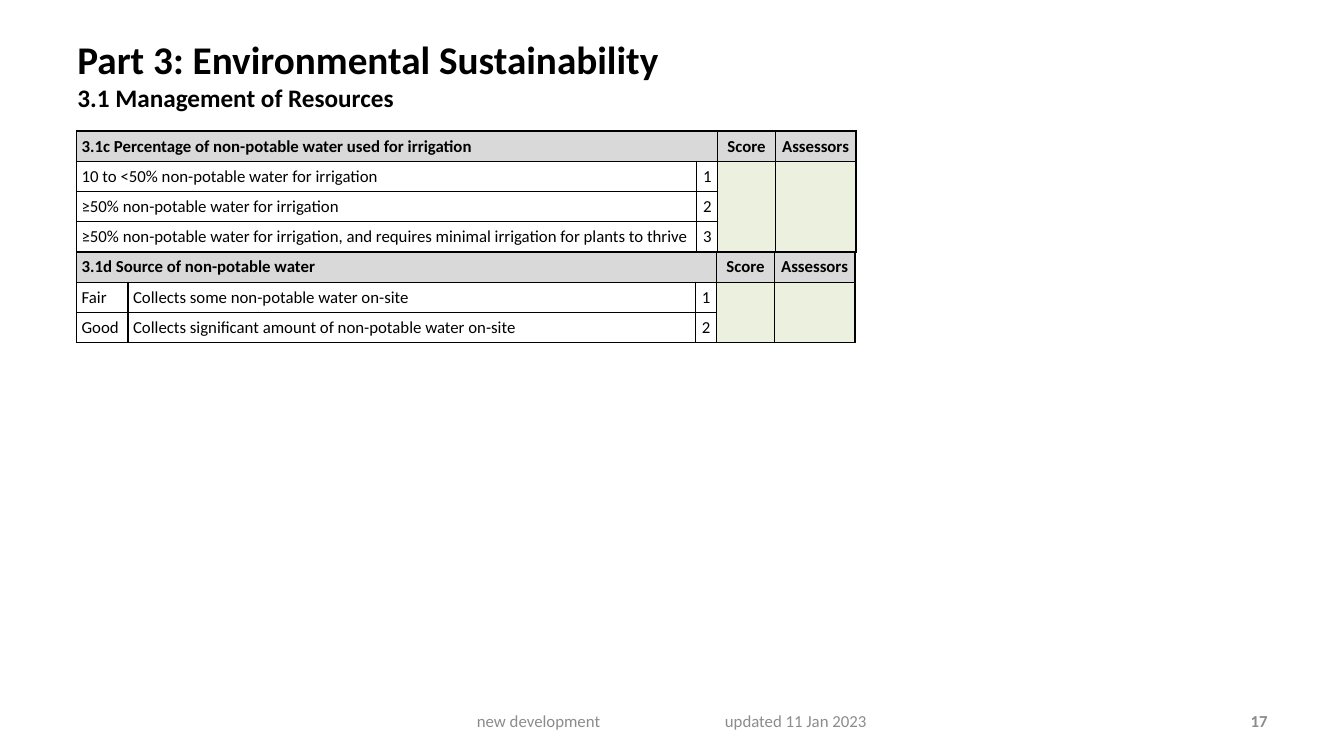
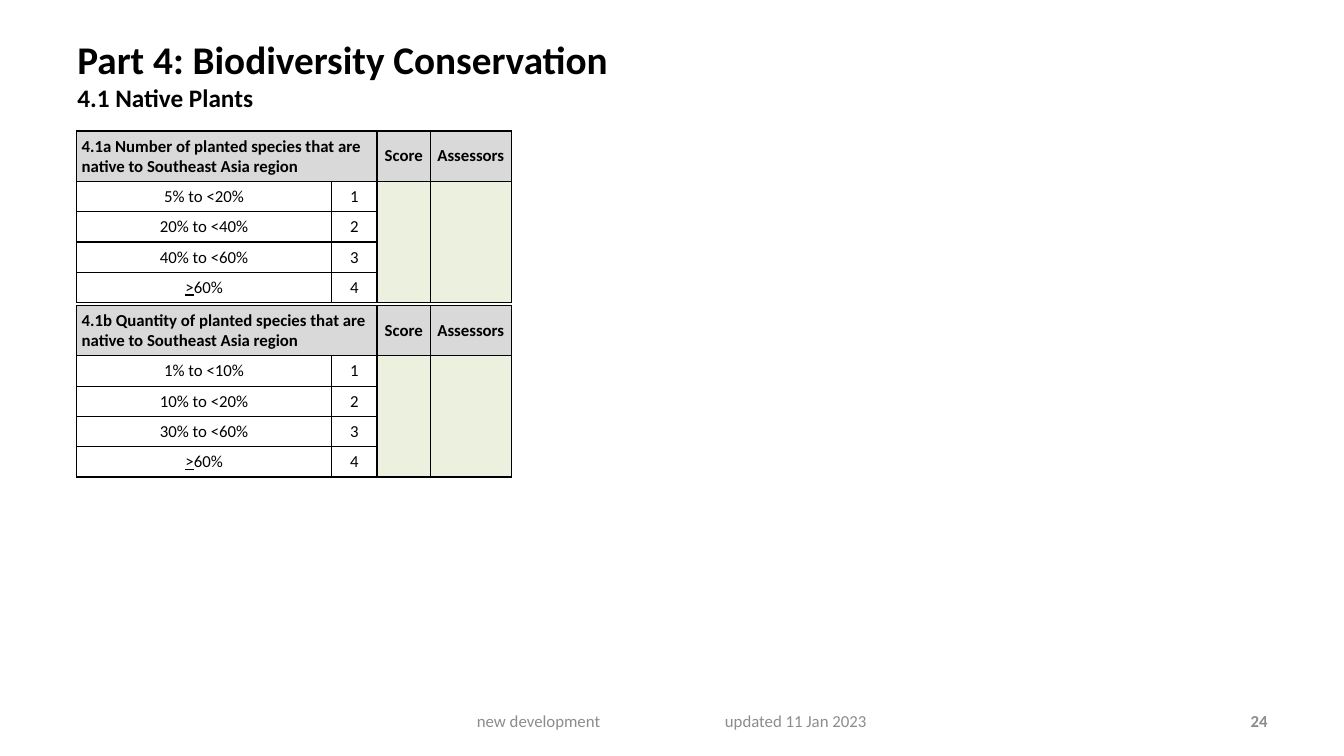
from lxml import etree
from pptx import Presentation
from pptx.dml.color import RGBColor
from pptx.enum.text import MSO_ANCHOR, PP_ALIGN
from pptx.oxml.ns import qn
from pptx.util import Pt

LEFT, CENTER, RIGHT = PP_ALIGN.LEFT, PP_ALIGN.CENTER, PP_ALIGN.RIGHT
TOP, MIDDLE = MSO_ANCHOR.TOP, MSO_ANCHOR.MIDDLE

PX = 9144  # EMU per px, 100 px to the inch
FONT = "Calibri"
BLACK, WHITE, GREY = "000000", "FFFFFF", "8C8C8C"
HEADER_FILL, SCORE_FILL = "D9D9D9", "EBF1DE"

TITLE_BOX = (67, 30, 1036, 99)
FOOTER_BOX = (456, 695, 422, 40)
NUMBER_BOX = (956, 695, 311, 40)
TABLE_LEFT, TABLE_TOP = 76, 130
ROW_H = 30
CELL_INSET = 5
FOOTER_INSET, FOOTER_TAB = 17, 246


def px(n):
    return int(n * PX)


def rgb(value):
    return RGBColor.from_string(value)


def style(r, size=12, color=BLACK, bold=False):
    r.font.name = FONT
    r.font.size = Pt(size)
    r.font.bold = bold
    r.font.color.rgb = rgb(color)


def add_text(slide, box, lines, color=BLACK, align=LEFT, anchor=MIDDLE):
    """Place a text box; lines are (text, size, bold)."""
    tf = slide.shapes.add_textbox(*map(px, box)).text_frame
    tf.word_wrap = True
    tf.vertical_anchor = anchor
    for i, (text, size, bold) in enumerate(lines):
        p = tf.add_paragraph() if i else tf.paragraphs[0]
        p.text = text
        p.alignment = align
        for r in p.runs:
            style(r, size, color, bold)
    return tf


def add_frame(slide, title, subtitle, number):
    """Title, footer and slide number."""
    add_text(slide, TITLE_BOX, [(title, 28, True), (subtitle, 18, True)], anchor=TOP)
    add_text(slide, NUMBER_BOX, [(number, 12, True)], GREY, RIGHT)
    tf = add_text(slide, FOOTER_BOX, [("new development\tupdated 11 Jan 2023", 12, False)], GREY)
    tf.margin_left = px(FOOTER_INSET)
    tabs = etree.SubElement(tf.paragraphs[0]._p.get_or_add_pPr(), qn("a:tabLst"))
    etree.SubElement(tabs, qn("a:tab"), pos=str(px(FOOTER_TAB)), algn="l")


def format_cell(cell, fill):
    """Black borders, insets and fill."""
    tc_pr = cell._tc.get_or_add_tcPr()
    for side in ("a:lnL", "a:lnR", "a:lnT", "a:lnB"):
        ln = etree.SubElement(tc_pr, qn(side), w=str(Pt(1)))
        solid = etree.SubElement(ln, qn("a:solidFill"))
        etree.SubElement(solid, qn("a:srgbClr"), val=BLACK)
    cell.fill.solid()
    cell.fill.fore_color.rgb = rgb(fill)
    cell.vertical_anchor = MIDDLE
    cell.margin_left = cell.margin_right = px(CELL_INSET)
    cell.margin_top = cell.margin_bottom = px(CELL_INSET)


def set_cell_text(cell, text, align, bold=False):
    """Write a cell; a leading > is underlined to read as "at least"."""
    p = cell.text_frame.paragraphs[0]
    p.alignment = align
    if not text:  # keeps an empty cell from stretching its row
        etree.SubElement(p._p, qn("a:endParaRPr"), sz="1200")
        return
    pieces = [">", text[1:]] if text.startswith(">") else [text]
    for piece in pieces:
        r = p.add_run()
        r.text = piece
        style(r, bold=bold)
        if piece == ">":
            r.font.underline = True


def add_score_table(slide, top, widths, heading, rows, header_h=ROW_H, label_align=LEFT):
    """Criteria with points, then merged Score and Assessors columns."""
    points_col = len(widths) - 3
    heights = [header_h] + [ROW_H] * len(rows)
    table = slide.shapes.add_table(
        len(heights), len(widths), px(TABLE_LEFT), px(top), px(sum(widths)), px(sum(heights))).table
    table.first_row = table.horz_banding = False
    for column, width in zip(table.columns, widths):
        column.width = px(width)
    for row, height in zip(table.rows, heights):
        row.height = px(height)

    header = [heading] + [""] * points_col + ["Score", "Assessors"]
    for i, texts in enumerate([header] + [[*row, "", ""] for row in rows]):
        for j, text in enumerate(texts):
            cell = table.cell(i, j)
            if i == 0:
                fill, align = HEADER_FILL, CENTER if j > points_col else LEFT
            else:
                fill = SCORE_FILL if j > points_col else WHITE
                align = CENTER if j >= points_col else label_align
            format_cell(cell, fill)
            set_cell_text(cell, text, align, bold=i == 0)

    table.cell(0, 0).merge(table.cell(0, points_col))
    for j in (points_col + 1, points_col + 2):
        table.cell(1, j).merge(table.cell(len(rows), j))


def build_resources(slide):
    add_frame(slide, "Part 3: Environmental Sustainability", "3.1 Management of Resources", "17")
    add_score_table(
        slide, TABLE_TOP, [615, 21, 57, 80],
        "3.1c Percentage of non-potable water used for irrigation",
        [("10 to <50% non-potable water for irrigation", "1"),
         ("≥50% non-potable water for irrigation", "2"),
         ("≥50% non-potable water for irrigation, and requires minimal irrigation"
          " for plants to thrive", "3")])
    add_score_table(
        slide, 250, [51, 563, 21, 57, 80], "3.1d Source of non-potable water",
        [("Fair", "Collects some non-potable water on-site", "1"),
         ("Good", "Collects significant amount of non-potable water on-site", "2")])


def build_native_plants(slide):
    add_frame(slide, "Part 4: Biodiversity Conservation", "4.1 Native Plants", "24")
    criteria = [
        (TABLE_TOP, "4.1a Number", ["5% to <20%", "20% to <40%", "40% to <60%", ">60%"]),
        (303, "4.1b Quantity", ["1% to <10%", "10% to <20%", "30% to <60%", ">60%"]),
    ]
    for top, measure, bands in criteria:
        add_score_table(
            slide, top, [253, 45, 53, 80],
            f"{measure} of planted species that are native to Southeast Asia region",
            [(band, str(points)) for points, band in enumerate(bands, 1)],
            header_h=50, label_align=CENTER)


def main():
    prs = Presentation()
    prs.slide_width, prs.slide_height = px(1333), px(750)
    for build in (build_resources, build_native_plants):
        build(prs.slides.add_slide(prs.slide_layouts[6]))
    prs.save("out.pptx")


if __name__ == "__main__":
    main()
